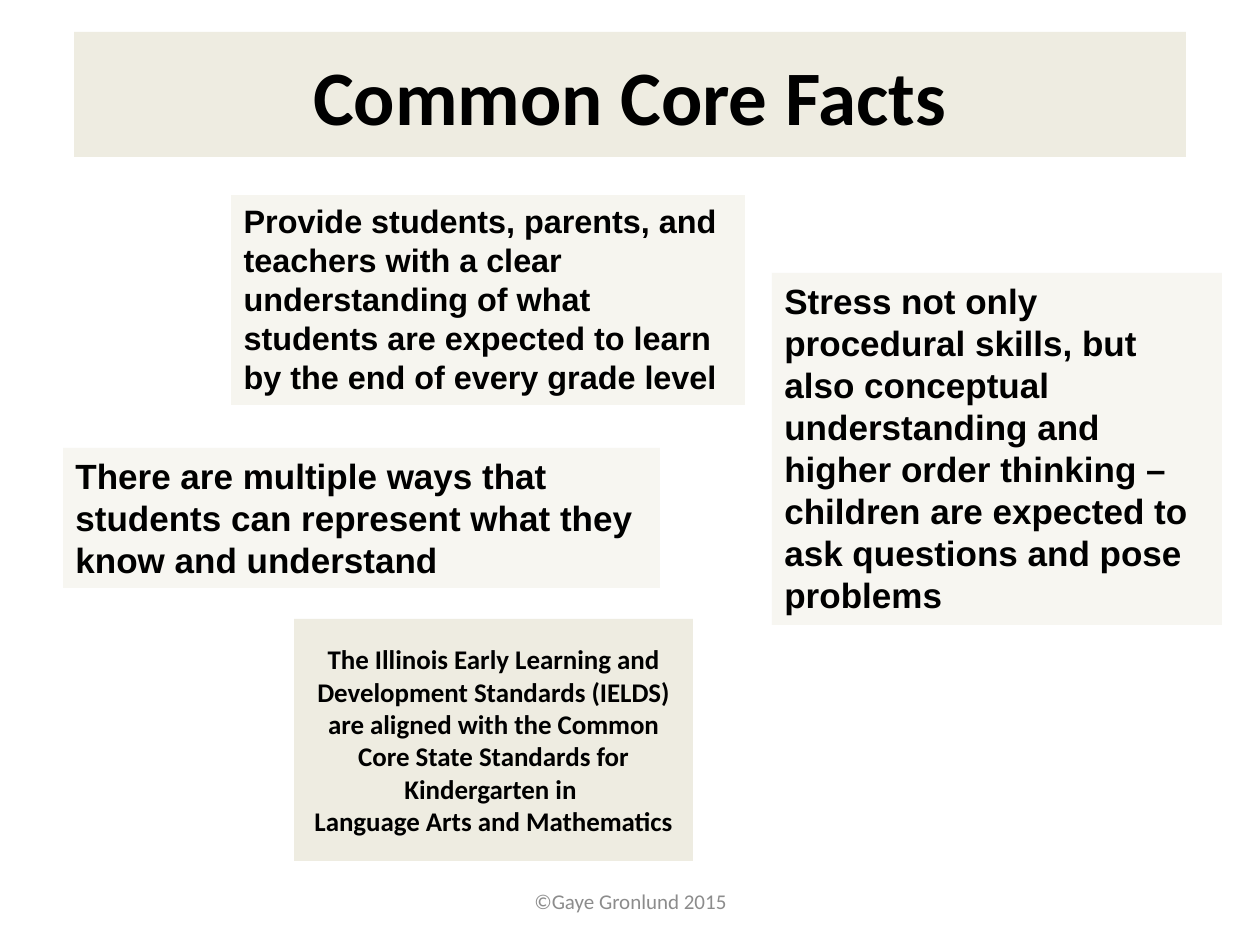
from dataclasses import dataclass

from lxml import etree
from pptx import Presentation
from pptx.dml.color import RGBColor
from pptx.enum.shapes import MSO_SHAPE
from pptx.enum.text import MSO_ANCHOR, MSO_AUTO_SIZE, PP_ALIGN
from pptx.oxml.ns import qn
from pptx.util import Emu, Pt

RECTANGLE = MSO_SHAPE.RECTANGLE
TOP, MIDDLE = MSO_ANCHOR.TOP, MSO_ANCHOR.MIDDLE
LEFT, CENTER = PP_ALIGN.LEFT, PP_ALIGN.CENTER
NO_AUTOFIT = MSO_AUTO_SIZE.NONE
PX = 914400 // 126


@dataclass(frozen=True)
class Theme:
    panel: RGBColor = RGBColor(0xEE, 0xEC, 0xE1)
    ink: RGBColor = RGBColor(0, 0, 0)
    muted: RGBColor = RGBColor(0x8C, 0x8C, 0x8C)
    heading_font: str = "Calibri"
    fact_font: str = "Arial"
    title_size: float = 44
    fact_size: float = 20
    lead_size: float = 18.5
    alignment_size: float = 15.4
    credit_size: float = 12


THEME = Theme()


def place(part, box):
    part.left, part.top, part.width, part.height = (Emu(n * PX) for n in box)


def fill_panel(part, opacity=100):
    part.fill.solid()
    part.fill.fore_color.rgb = THEME.panel
    if opacity < 100:
        color = part.fill._xPr.find(qn("a:solidFill"))[0]
        etree.SubElement(color, qn("a:alpha"), val=str(opacity * 1000))


def remove_bullet(paragraph):
    properties = paragraph._p.get_or_add_pPr()
    properties.set("marL", "0")
    properties.set("indent", "0")
    etree.SubElement(properties, qn("a:buNone"))


def write(part, text, font, size, align=LEFT, anchor=TOP, color=THEME.ink,
          bold=True, bulleted=False):
    frame = part.text_frame
    frame.word_wrap = True
    frame.auto_size = NO_AUTOFIT
    frame.vertical_anchor = anchor
    frame.text = text
    paragraph = frame.paragraphs[0]
    if bulleted:
        remove_bullet(paragraph)
        paragraph.space_before = Pt(0)
    paragraph.alignment = align
    paragraph.font.name = font
    paragraph.font.size = Pt(size)
    paragraph.font.bold = bold
    paragraph.font.color.rgb = color


def add_panel(slide, box, opacity=100):
    panel = slide.shapes.add_shape(RECTANGLE, 0, 0, 0, 0)
    place(panel, box)
    panel.shadow.inherit = False
    panel.line.fill.background()
    fill_panel(panel, opacity)
    return panel


def title_banner(slide, box, text):
    title = slide.shapes.title
    place(title, box)
    fill_panel(title)
    write(title, text, THEME.heading_font, THEME.title_size, CENTER, MIDDLE)


def lead_fact(slide, box, text):
    body = slide.placeholders[1]
    place(body, box)
    fill_panel(body, 50)
    write(body, text, THEME.fact_font, THEME.lead_size, bulleted=True)


def fact(slide, box, text, opacity):
    panel = add_panel(slide, box, opacity)
    write(panel, text, THEME.fact_font, THEME.fact_size)


def alignment_note(slide, box, text):
    panel = add_panel(slide, box)
    write(panel, text, THEME.heading_font, THEME.alignment_size, CENTER, MIDDLE)


def credit(slide, box, text):
    footer = slide.shapes.add_textbox(0, 0, 0, 0)
    place(footer, box)
    write(footer, text, THEME.heading_font, THEME.credit_size, CENTER, MIDDLE,
          THEME.muted, False)


def main():
    deck = Presentation()
    deck.slide_width, deck.slide_height = Emu(1260 * PX), Emu(945 * PX)
    slide = deck.slides.add_slide(deck.slide_layouts[1])
    title_banner(slide, (74, 32, 1112, 125), "Common Core Facts")
    lead_fact(slide, (231, 195, 514, 210),
              "Provide students, parents, and teachers with a clear understanding of "
              "what students are expected to learn by the end of every grade level")
    credit(slide, (431, 876, 399, 50), "©Gaye Gronlund 2015")
    fact(slide, (772, 273, 450, 352),
         "Stress not only procedural skills, but also conceptual understanding and "
         "higher order thinking – children are expected to ask questions and pose "
         "problems", 44)
    fact(slide, (63, 448, 597, 140),
         "There are multiple ways that students can represent what they know and "
         "understand", 45)
    alignment_note(slide, (294, 619, 399, 242),
                   "The Illinois Early Learning and Development Standards (IELDS) are "
                   "aligned with the Common Core State Standards for Kindergarten in "
                   "\vLanguage Arts and Mathematics")
    deck.save("out.pptx")


if __name__ == "__main__":
    main()
